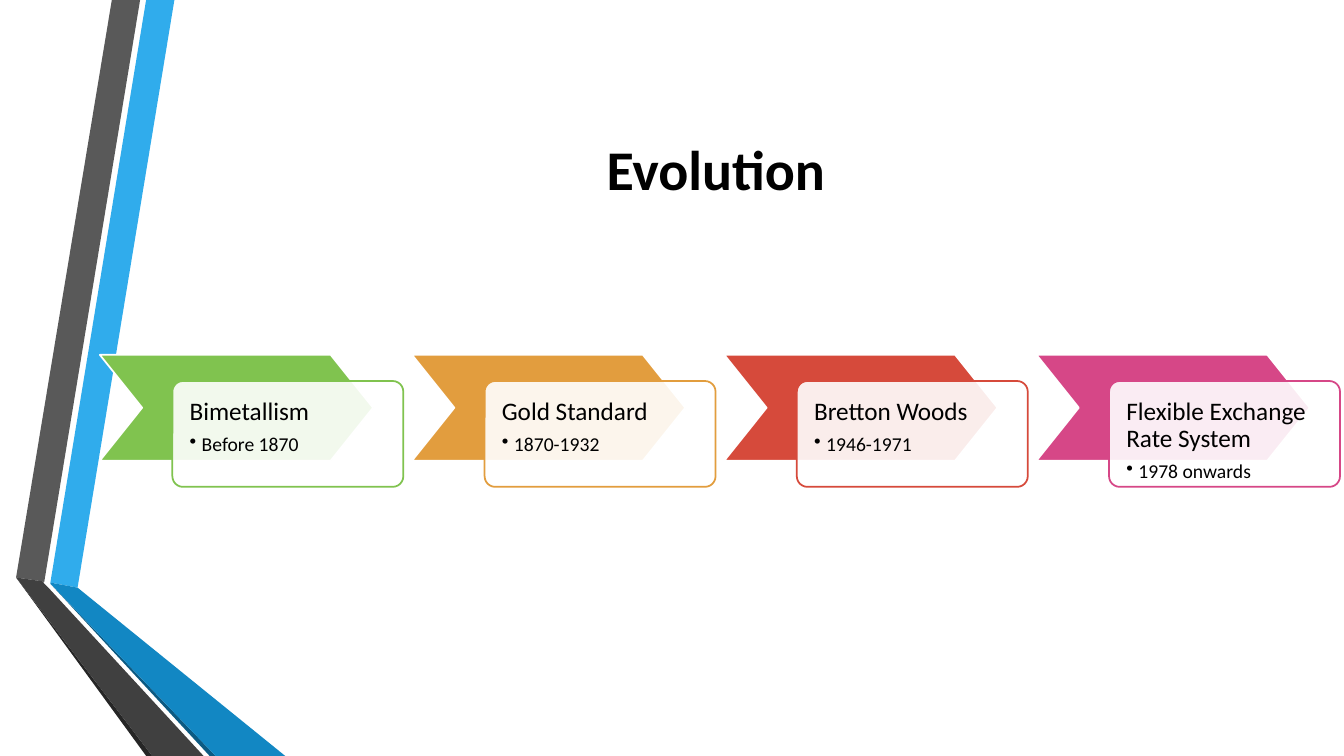
from lxml import etree
from pptx import Presentation
from pptx.dml.color import RGBColor
from pptx.enum.shapes import MSO_SHAPE
from pptx.enum.text import MSO_ANCHOR, PP_ALIGN
from pptx.oxml.ns import qn
from pptx.util import Inches, Pt

CHEVRON = MSO_SHAPE.CHEVRON
ROUNDED = MSO_SHAPE.ROUNDED_RECTANGLE
TOP, MIDDLE = MSO_ANCHOR.TOP, MSO_ANCHOR.MIDDLE
LEFT, CENTER = PP_ALIGN.LEFT, PP_ALIGN.CENTER

COLORS = {
    "white": "FFFFFF", "black": "000000",
    "sky": "30ACEC", "blue": "1287C3", "navy": "0C5A82",
    "gray": "595959", "charcoal": "404040", "soot": "262626",
    "green": "80C34F", "orange": "E29D3E", "red": "D64A3B", "pink": "D64787",
}
COLUMNS, ROWS = 13.33, 7.5

RIBBONS = [
    ("sky", [(0.5, 5.78), (0.77, 5.83), (1.73, 0), (1.45, 0)]),
    ("gray", [(1.39, 0), (1.11, 0), (0.16, 5.73), (0.44, 5.77)]),
    ("soot", [(0.16, 5.73), (1.45, ROWS), (1.51, ROWS)]),
    ("navy", [(0.5, 5.79), (2.08, ROWS), (2.14, ROWS)]),
    ("blue", [(0.5, 5.79), (2.14, ROWS), (2.83, ROWS), (0.77, 5.83), (0.5, 5.78)]),
    ("charcoal", [(2.02, ROWS), (0.48, 5.83), (0.43, 5.78), (0.44, 5.77),
                  (0.16, 5.73), (1.51, ROWS)]),
]
STAGES = [
    ("green", "Bimetallism", "Before 1870"),
    ("orange", "Gold Standard", "1870-1932"),
    ("red", "Bretton Woods", "1946-1971"),
    ("pink", "Flexible Exchange Rate System", "1978 onwards"),
]
STAGE_LEFT, STAGE_RIGHT, STAGE_TOP = 0.99, 10.28, 3.52
STAGE_STEP = (STAGE_RIGHT - STAGE_LEFT) / (len(STAGES) - 1)
STAGE_HEIGHT = 1.05


class SlideBuilder:
    font = "Calibri"
    line_width = 1.25

    def __init__(self, deck):
        self.page = deck.slides.add_slide(deck.slide_layouts[6])
        self.column = deck.slide_width / COLUMNS
        self.row = deck.slide_height / ROWS

    def place(self, x, y):
        return round(x * self.column), round(y * self.row)

    def color(self, name):
        return RGBColor.from_string(COLORS[name])

    def paint(self, shape, fill, line=None):
        shape.shadow.inherit = False
        shape.fill.solid()
        shape.fill.fore_color.rgb = self.color(fill)
        if line:
            shape.line.color.rgb = self.color(line)
            shape.line.width = Pt(self.line_width)
        else:
            shape.line.fill.background()

    def ribbon(self, fill, points):
        corners = [self.place(*point) for point in points]
        outline = self.page.shapes.build_freeform(*corners[0])
        outline.add_line_segments(corners[1:], close=True)
        self.paint(outline.convert_to_shape(), fill)

    def shape(self, kind, left, top, width, height, adjustment, fill, line):
        shape = self.page.shapes.add_shape(
            kind, *self.place(left, top), *self.place(width, height))
        shape.adjustments[0] = adjustment
        self.paint(shape, fill, line)
        return shape

    def frame(self, shape, anchor, inset):
        frame = shape.text_frame
        frame.word_wrap = True
        frame.vertical_anchor = anchor
        frame.margin_left = frame.margin_right = Inches(inset)
        frame.margin_top = frame.margin_bottom = Inches(inset)
        return frame

    def add_text(self, para, text, size, align=LEFT, bold=False):
        para.alignment = align
        para.line_spacing = 0.9
        span = para.add_run()
        span.text = text
        span.font.name = self.font
        span.font.size = Pt(size)
        span.font.bold = bold
        span.font.color.rgb = self.color("black")

    def bullet(self, para):
        properties = para._p.get_or_add_pPr()
        properties.set("marL", str(Inches(0.12)))
        properties.set("indent", str(Inches(-0.12)))
        etree.SubElement(properties, qn("a:buChar")).set("char", "•")

    def title(self, text, left, top, width, height):
        box = self.page.shapes.add_textbox(
            *self.place(left, top), *self.place(width, height))
        frame = self.frame(box, MIDDLE, 0.1)
        self.add_text(frame.paragraphs[0], text, 40, CENTER, bold=True)

    def stage(self, left, top, color, name, period):
        self.shape(CHEVRON, left, top, 2.71, STAGE_HEIGHT, 0.4, color, "white")
        card = self.shape(ROUNDED, left + 0.72, top + 0.26, 2.29, STAGE_HEIGHT,
                          0.1, "white", color)
        tint = card._element.spPr.find(qn("a:solidFill"))[0]
        etree.SubElement(tint, qn("a:alpha")).set("val", "90000")
        frame = self.frame(card, TOP, 0.14)
        heading = frame.paragraphs[0]
        self.add_text(heading, name, 18)
        heading.space_after = Pt(6.3)
        detail = frame.add_paragraph()
        detail.level = 1
        self.add_text(detail, period, 14)
        detail.space_after = Pt(2.1)
        self.bullet(detail)


def main():
    deck = Presentation()
    deck.slide_width, deck.slide_height = Inches(COLUMNS), Inches(ROWS)
    slide = SlideBuilder(deck)
    for fill, points in RIBBONS:
        slide.ribbon(fill, points)
    slide.title("Evolution", 1.62, 0.75, 10.96, 1.92)
    for index, stage in enumerate(STAGES):
        slide.stage(STAGE_LEFT + index * STAGE_STEP, STAGE_TOP, *stage)
    deck.save("out.pptx")


if __name__ == "__main__":
    main()
